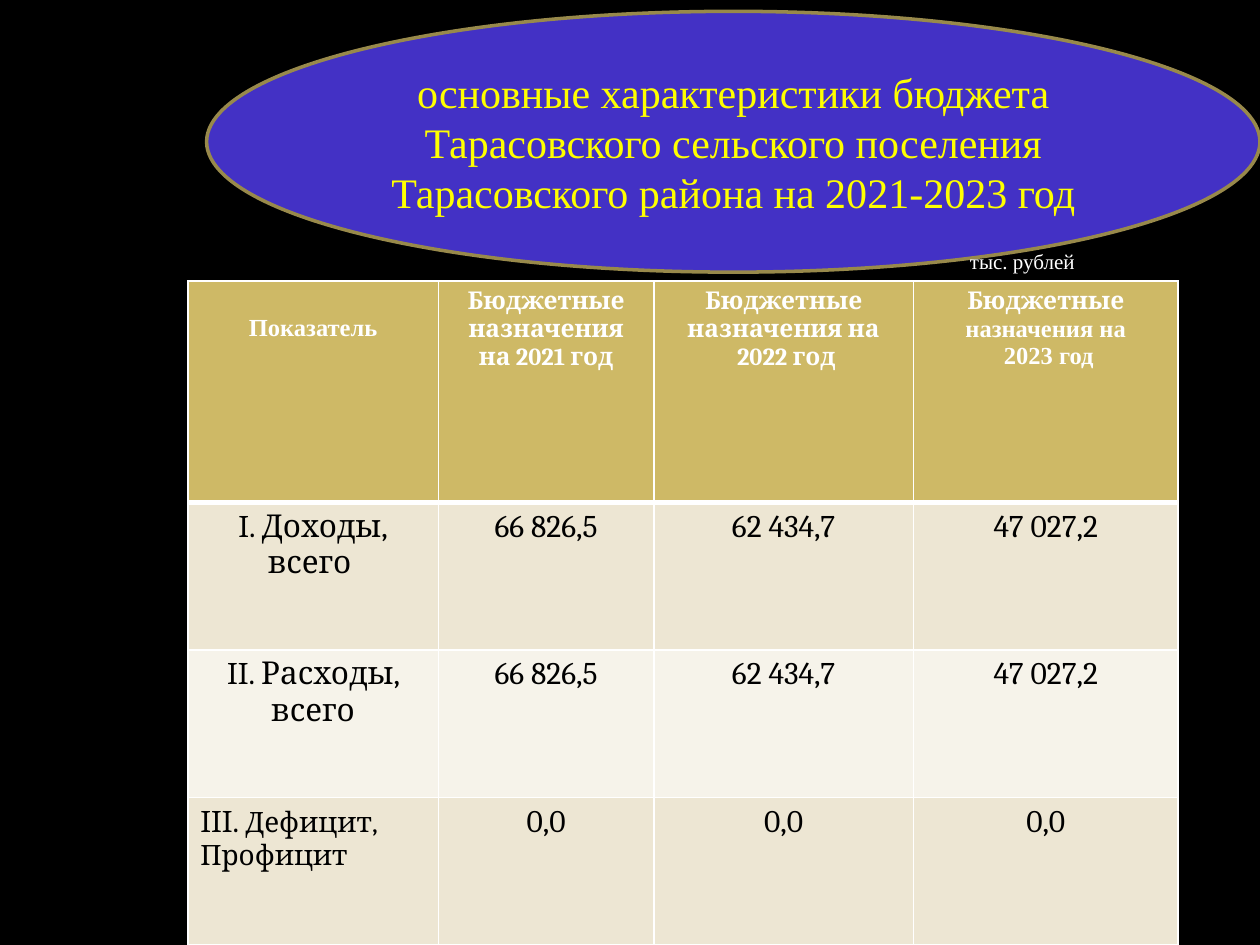
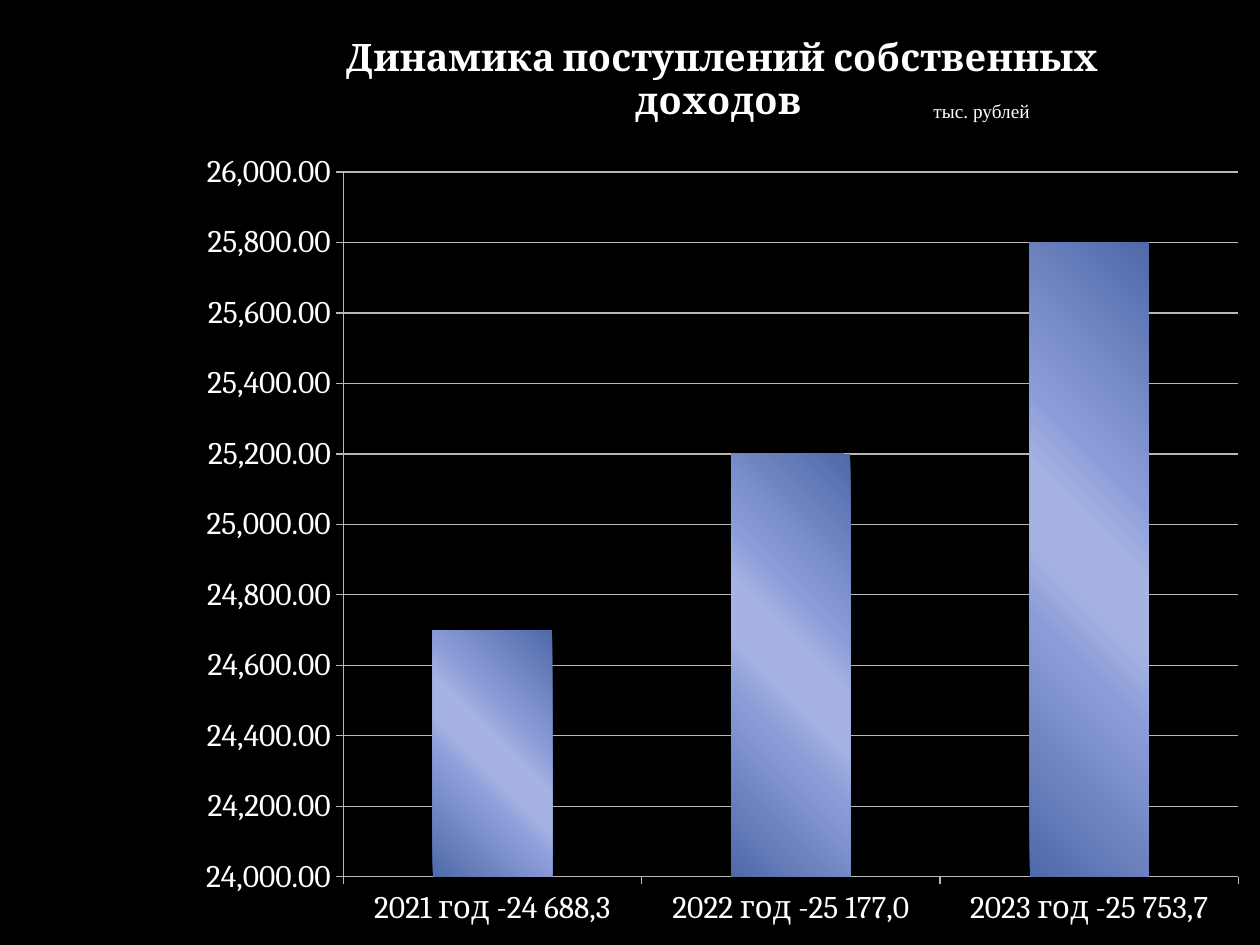
from dataclasses import dataclass
from lxml.etree import SubElement
from pptx import Presentation
from pptx.chart.data import CategoryChartData
from pptx.dml.color import RGBColor
from pptx.enum.chart import XL_CHART_TYPE, XL_TICK_MARK
from pptx.enum.shapes import MSO_SHAPE
from pptx.enum.text import MSO_ANCHOR, MSO_AUTO_SIZE, PP_ALIGN
from pptx.oxml import parse_xml
from pptx.oxml.ns import nsdecls, qn
from pptx.util import Inches, Pt


@dataclass(frozen=True)
class Theme:
    serif: str = "Cambria"
    roman: str = "Times New Roman"
    background: str = "000000"
    light: str = "FFFFFF"
    dark: str = "000000"
    header: str = "CEB966"
    bands: tuple = ("EDE6D3", "F6F3EA")
    ellipse: str = "4331C5"
    ellipse_line: str = "98894B"
    title: str = "FFFF00"
    grid: str = "B8B8B8"
    bar_stops: tuple = ((0, "4F6AA8"), (35, "8B9DD8"), (45, "A5B2E2"),
                        (55, "A5B2E2"), (65, "8B9DD8"), (100, "4F6AA8"))
    title_size: float = 24
    chart_title_size: float = 21.6
    body_size: float = 18
    small_body_size: float = 16
    header_size: float = 14


T = Theme()
UNIT = "тыс. рублей"
BUDGET_TITLE = ("основные характеристики бюджета Тарасовского сельского поселения "
                "Тарасовского района на 2021-2023 год")

# A cell is a list of paragraphs; a paragraph is a list of (text, font, size) runs.
HEADER = [
    [[("Показатель", T.roman, T.header_size)]],
    [[("Бюджетные назначения на 2021 год", T.serif, T.header_size)]],
    [[("Бюджетные назначения на", T.serif, T.header_size)],
     [(" 2022 год", T.serif, T.header_size)]],
    [[("Бюджетные ", T.serif, T.header_size), ("назначения на", T.roman, T.header_size)],
     [(" 2023 год", T.roman, T.header_size)]],
]
LABELS = [
    [[("I. Доходы,", T.serif, T.body_size)], [("всего ", T.serif, T.body_size)]],
    [[("II. Расходы, всего", T.serif, T.body_size)]],
    [[("III. ", T.serif, T.body_size), ("Дефицит,", T.serif, T.small_body_size)],
     [("Профицит", T.serif, T.small_body_size)]],
]
AMOUNTS = [
    ["66 826,5", "62 434,7", "47 027,2"],
    ["66 826,5", "62 434,7", "47 027,2"],
    ["0,0", "0,0", "0,0"],
]
COLUMN_WIDTHS = [1.99, 1.71, 2.06, 2.1]
ROW_HEIGHTS = [1.76, 1.17, 1.17, 1.17]

INCOME_TITLE = "Динамика поступлений собственных доходов "
INCOME = {
    "2021 год -24 688,3": 24700,
    "2022 год -25 177,0": 25200,
    "2023 год -25 753,7": 25800,
}
PLOT_AREA = {"x": 0.147, "y": 0.182, "w": 0.833, "h": 0.746}


def rgb(color):
    return RGBColor.from_string(color)


def style(font, name, size, color, bold=False):
    font.name, font.size, font.bold = name, Pt(size), bold
    font.color.rgb = rgb(color)


def new_slide(prs):
    s = prs.slides.add_slide(prs.slide_layouts[6])
    s.background.fill.solid()
    s.background.fill.fore_color.rgb = rgb(T.background)
    return s


def add_unit(s, left, top, width, height, size):
    sp = s.shapes.add_textbox(*map(Inches, (left, top, width, height)))
    tf = sp.text_frame
    tf.word_wrap = False
    tf.auto_size = MSO_AUTO_SIZE.SHAPE_TO_FIT_TEXT
    p = tf.paragraphs[0]
    p.text = UNIT
    style(p.font, T.roman, size, T.light)


def add_title_ellipse(s):
    sp = s.shapes.add_shape(MSO_SHAPE.OVAL, *map(Inches, (1.64, 0.09, 8.36, 2.07)))
    sp.shadow.inherit = False
    sp.fill.solid()
    sp.fill.fore_color.rgb = rgb(T.ellipse)
    sp.line.color.rgb = rgb(T.ellipse_line)
    sp.line.width = Pt(2)
    tf = sp.text_frame
    tf.word_wrap = True
    tf.vertical_anchor = MSO_ANCHOR.MIDDLE
    p = tf.paragraphs[0]
    p.text = BUDGET_TITLE
    p.alignment = PP_ALIGN.CENTER
    style(p.font, T.roman, T.title_size, T.title)


def set_borders(cell, widths):
    """Draw white borders; widths gives points for left, right, top and bottom."""
    tc_pr = cell._tc.get_or_add_tcPr()
    for i, (side, width) in enumerate(zip(("lnL", "lnR", "lnT", "lnB"), widths)):
        tc_pr.insert(i, parse_xml(
            f'<a:{side} {nsdecls("a")} w="{Pt(width)}"><a:solidFill>'
            f'<a:srgbClr val="{T.light}"/></a:solidFill></a:{side}>'))


def fill_cell(cell, paragraphs, fill, color, bold, align):
    cell.fill.solid()
    cell.fill.fore_color.rgb = rgb(fill)
    tf = cell.text_frame
    for i, runs in enumerate(paragraphs):
        p = tf.add_paragraph() if i else tf.paragraphs[0]
        p.alignment = align
        for text, font, size in runs:
            r = p.add_run()
            r.text = text
            style(r.font, font, size, color, bold)


def add_budget_table(s):
    rows = [HEADER] + [
        [label] + [[[(amount, T.serif, T.body_size)]] for amount in amounts]
        for label, amounts in zip(LABELS, AMOUNTS)]
    table = s.shapes.add_table(
        len(rows), len(COLUMN_WIDTHS), Inches(1.49), Inches(2.23),
        Inches(sum(COLUMN_WIDTHS)), Inches(sum(ROW_HEIGHTS))).table
    for column, width in zip(table.columns, COLUMN_WIDTHS):
        column.width = Inches(width)
    for row, height in zip(table.rows, ROW_HEIGHTS):
        row.height = Inches(height)
    for i, row in enumerate(rows):
        is_header = i == 0
        fill = T.header if is_header else T.bands[(i - 1) % 2]
        color = T.light if is_header else T.dark
        for j, paragraphs in enumerate(row):
            cell = table.cell(i, j)
            is_left = i == len(rows) - 1 and j == 0
            fill_cell(cell, paragraphs, fill, color, is_header,
                      PP_ALIGN.LEFT if is_left else PP_ALIGN.CENTER)
            set_borders(cell, (1, 1, 3 if i == 1 else 1, 3 if is_header else 1))
    table.cell(0, 0).margin_top = Inches(0.27)
    for p in table.cell(1, 0).text_frame.paragraphs:
        p_pr = p._p.get_or_add_pPr()
        p_pr.set("marL", str(Inches(0.38)))
        p_pr.set("indent", str(-Inches(0.38)))


def set_plot_area(chart):
    area = chart._chartSpace.chart.plotArea
    for old in area.findall(qn("c:layout")):
        area.remove(old)
    layout = parse_xml(f'<c:layout {nsdecls("c")}><c:manualLayout/></c:layout>')
    settings = {"layoutTarget": "inner", "xMode": "edge", "yMode": "edge", **PLOT_AREA}
    for name, value in settings.items():
        SubElement(layout[0], qn(f"c:{name}")).set("val", str(value))
    area.insert(0, layout)


def set_bar_gradient(series):
    stops = "".join(f'<a:gs pos="{pos * 1000}"><a:srgbClr val="{color}"/></a:gs>'
                    for pos, color in T.bar_stops)
    sp_pr = series._element.get_or_add_spPr()
    sp_pr.insert(0, parse_xml(
        f'<a:gradFill {nsdecls("a")} rotWithShape="1"><a:gsLst>{stops}</a:gsLst>'
        '<a:lin ang="18900000" scaled="0"/></a:gradFill>'))


def add_income_chart(s):
    data = CategoryChartData(number_format="#,##0.00")
    data.categories = list(INCOME)
    data.add_series(INCOME_TITLE, list(INCOME.values()))
    chart = s.shapes.add_chart(
        XL_CHART_TYPE.COLUMN_STACKED, *map(Inches, (1.47, 0, 8.53, 7.5)), data).chart
    style(chart.font, T.serif, T.body_size, T.light)
    chart.has_legend = False
    chart.has_title = True
    p = chart.chart_title.text_frame.paragraphs[0]
    p.text = INCOME_TITLE
    style(p.font, T.serif, T.chart_title_size, T.light, True)
    chart.chart_title.include_in_layout = False

    values = chart.value_axis
    values.minimum_scale, values.maximum_scale, values.major_unit = 24000, 26000, 200
    values.tick_labels.number_format = "#,##0.00"
    values.tick_labels.number_format_is_linked = False
    values.has_major_gridlines = True
    values.major_gridlines.format.line.color.rgb = rgb(T.grid)
    for axis in (values, chart.category_axis):
        axis.major_tick_mark = XL_TICK_MARK.OUTSIDE
        axis.format.line.color.rgb = rgb(T.grid)

    plot = chart.plots[0]
    plot.gap_width, plot.overlap, plot.vary_by_categories = 150, 100, False
    set_bar_gradient(plot.series[0])
    set_plot_area(chart)


def main():
    prs = Presentation()
    prs.slide_width, prs.slide_height = Inches(10), Inches(7.5)

    s = new_slide(prs)
    add_budget_table(s)
    add_title_ellipse(s)
    add_unit(s, 7.6, 1.92, 1.04, 0.3, 12)

    s = new_slide(prs)
    add_income_chart(s)
    add_unit(s, 7.31, 0.74, 0.98, 0.29, 11)

    prs.save("out.pptx")


if __name__ == "__main__":
    main()
